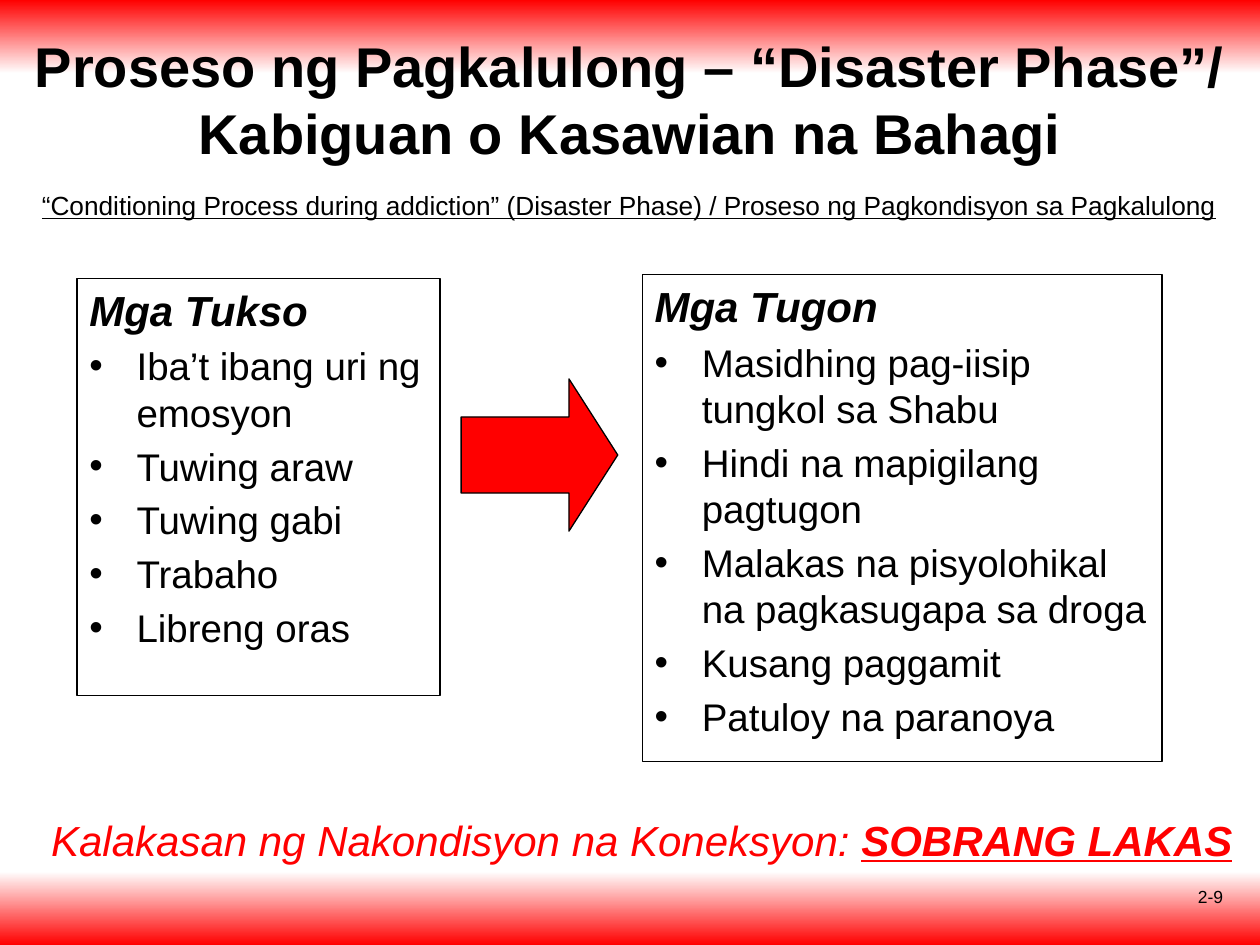
"""Build a slide on the disaster phase of the addiction process."""
from lxml.etree import SubElement
from pptx import Presentation
from pptx.dml.color import RGBColor
from pptx.enum.shapes import MSO_SHAPE
from pptx.enum.text import MSO_ANCHOR, PP_ALIGN
from pptx.oxml.ns import qn
from pptx.util import Pt

RED = RGBColor(255, 0, 0)
WHITE = RGBColor(255, 255, 255)
BLACK = RGBColor(0, 0, 0)
HEADING = {"size": Pt(24), "bold": True, "italic": True}
ITEM = {"size": Pt(22)}
INDENT = Pt(27)


def add_box(left, top, width, height, anchor=MSO_ANCHOR.TOP):
    box = page.shapes.add_textbox(Pt(left), Pt(top), Pt(width), Pt(height))
    box.text_frame.word_wrap = True
    box.text_frame.vertical_anchor = anchor
    return box


def add_span(para, text, formats, color=BLACK):
    span = para.add_run()
    span.text = text
    span.font.color.rgb = color
    for name, value in {"name": "Arial", **formats}.items():
        setattr(span.font, name, value)


deck = Presentation()
deck.slide_width, deck.slide_height = Pt(720), Pt(540)
page = deck.slides.add_slide(deck.slide_layouts[6])

for top, colors in ((498, (WHITE, RED)), (0, (RED, WHITE))):
    band = page.shapes.add_shape(MSO_SHAPE.RECTANGLE, 0, Pt(top), Pt(720), Pt(42))
    band.shadow.inherit = False
    band.line.fill.background()
    band.fill.gradient()
    band.fill.gradient_angle = 270
    for stop, position, color in zip(band.fill.gradient_stops, (0, 1), colors):
        stop.position = position
        stop.color.rgb = color

panels = (
    ((44, 159, 207.5, 238.5), "Mga Tukso",
     ("Iba’t ibang uri ng emosyon", "Tuwing araw", "Tuwing gabi",
      "Trabaho", "Libreng oras")),
    ((367, 157, 297, 278), "Mga Tugon",
     ("Masidhing pag-iisip tungkol sa Shabu", "Hindi na mapigilang pagtugon",
      "Malakas na pisyolohikal na pagkasugapa sa droga",
      "Kusang paggamit", "Patuloy na paranoya")),
)
for place, heading, items in panels:
    box = add_box(*place)
    box.line.color.rgb = BLACK
    box.line.width = Pt(0.75)
    para = box.text_frame.paragraphs[0]
    para.space_before = Pt(4.8)
    add_span(para, heading, HEADING)
    for item in items:
        para = box.text_frame.add_paragraph()
        para.space_before = Pt(4.4)
        properties = para._p.get_or_add_pPr()
        properties.set("marL", str(INDENT))
        properties.set("indent", str(-INDENT))
        SubElement(properties, qn("a:buFont")).set("typeface", "Arial")
        SubElement(properties, qn("a:buChar")).set("char", "•")
        add_span(para, item, ITEM)

arrow = page.shapes.add_shape(
    MSO_SHAPE.RIGHT_ARROW, Pt(263.5), Pt(216.5), Pt(89.5), Pt(87))
arrow.shadow.inherit = False
arrow.adjustments[0], arrow.adjustments[1] = 0.5, 0.32
arrow.fill.solid()
arrow.fill.fore_color.rgb = RED
arrow.line.color.rgb = BLACK
arrow.line.width = Pt(0.75)

strength = add_box(13.5, 462, 706.5, 36, MSO_ANCHOR.MIDDLE).text_frame.paragraphs[0]
strength.alignment = PP_ALIGN.CENTER
add_span(strength, "Kalakasan ng Nakondisyon na Koneksyon: ",
         {"size": Pt(24), "italic": True}, RED)
add_span(strength, "SOBRANG LAKAS", {**HEADING, "underline": True}, RED)

labels = (
    ((0, 31, 720, 51), MSO_ANCHOR.MIDDLE, PP_ALIGN.CENTER,
     "Proseso ng Pagkalulong – “Disaster Phase”/ Kabiguan o Kasawian na Bahagi",
     {"size": Pt(32), "bold": True}),
    ((13.5, 104.5, 692, 25), MSO_ANCHOR.TOP, PP_ALIGN.CENTER,
     "“Conditioning Process during addiction” (Disaster Phase) / "
     "Proseso ng Pagkondisyon sa Pagkalulong",
     {"size": Pt(15), "underline": True}),
    ((538, 502.5, 168, 37.5), MSO_ANCHOR.TOP, PP_ALIGN.RIGHT, "2-9", {"size": Pt(10)}),
)
for place, anchor, alignment, text, formats in labels:
    para = add_box(*place, anchor).text_frame.paragraphs[0]
    para.alignment = alignment
    add_span(para, text, formats)

deck.save("out.pptx")
